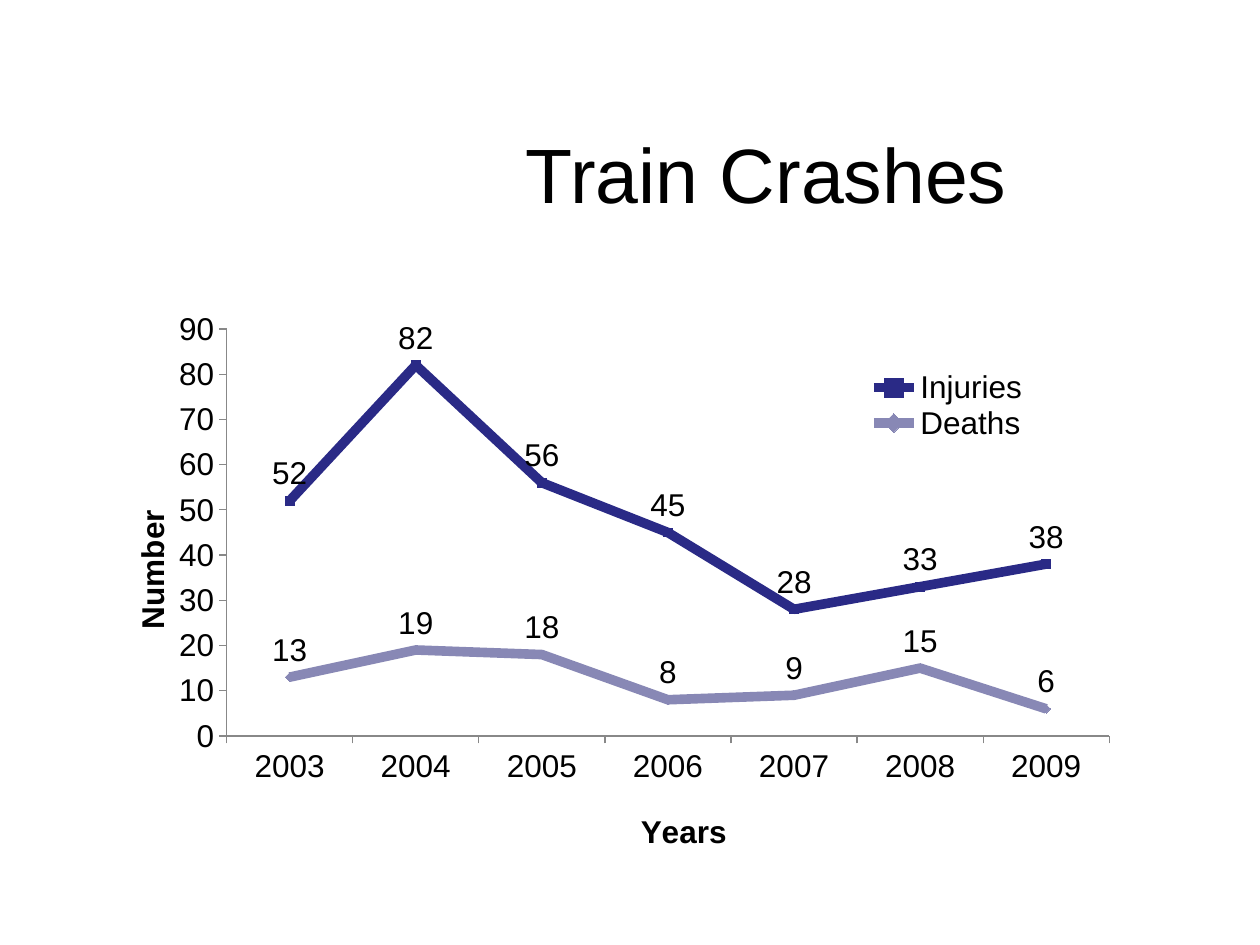
from dataclasses import dataclass

from lxml import etree
from pptx import Presentation
from pptx.chart.data import CategoryChartData
from pptx.dml.color import RGBColor
from pptx.enum.chart import (XL_CHART_TYPE, XL_LABEL_POSITION, XL_LEGEND_POSITION,
                             XL_MARKER_STYLE, XL_TICK_MARK)
from pptx.enum.text import MSO_ANCHOR, PP_ALIGN
from pptx.oxml.ns import qn
from pptx.util import Emu, Pt

LINE_MARKERS = XL_CHART_TYPE.LINE_MARKERS
LABEL_ABOVE = XL_LABEL_POSITION.ABOVE
LEGEND_RIGHT = XL_LEGEND_POSITION.RIGHT
SQUARE, DIAMOND = XL_MARKER_STYLE.SQUARE, XL_MARKER_STYLE.DIAMOND
TICK_OUT, TICK_NONE = XL_TICK_MARK.OUTSIDE, XL_TICK_MARK.NONE
MIDDLE, CENTER = MSO_ANCHOR.MIDDLE, PP_ALIGN.CENTER

FONT = "Arial"
BLACK = "000000"
AXIS_GREY = "888888"
YEARS = [str(year) for year in range(2003, 2010)]


@dataclass
class Series:
    name: str
    values: list[int]
    color: str
    marker: int


SERIES = [
    Series("Injuries", [52, 82, 56, 45, 28, 33, 38], "2A2A86", SQUARE),
    Series("Deaths", [13, 19, 18, 8, 9, 15, 6], "8888B5", DIAMOND),
]


def px(n: int) -> Emu:
    return Emu(round(n * 914400 / 126))


def rgb(color: str) -> RGBColor:
    return RGBColor.from_string(color)


def set_font(font, size: int, bold: bool = False) -> None:
    font.name, font.size, font.bold = FONT, Pt(size), bold
    font.color.rgb = rgb(BLACK)


def place(element, index: int, target: str = "", **fractions: float) -> None:
    """Give a chart part a manual layout in fractions of the chart."""
    for old in element.findall(qn("c:layout")):
        element.remove(old)
    layout = etree.Element(qn("c:layout"))
    element.insert(index, layout)
    manual = etree.SubElement(layout, qn("c:manualLayout"))
    settings = {"layoutTarget": target} if target else {}
    settings |= {"xMode": "edge", "yMode": "edge"} | fractions
    for tag, value in settings.items():
        etree.SubElement(manual, qn(f"c:{tag}")).set("val", str(value))


def style_axis(axis, title: str, x: float, y: float) -> None:
    axis.has_major_gridlines = False
    axis.major_tick_mark, axis.minor_tick_mark = TICK_OUT, TICK_NONE
    axis.format.line.color.rgb = rgb(AXIS_GREY)
    axis.format.line.width = Pt(0.75)
    set_font(axis.tick_labels.font, 18)
    tf = axis.axis_title.text_frame
    tf.text = title
    set_font(tf.paragraphs[0].font, 18, bold=True)
    place(axis.axis_title._element, 1, x=x, y=y)


def style_series(line, series: Series) -> None:
    line.smooth = False
    line.format.line.color.rgb = rgb(series.color)
    line.format.line.width = Pt(5.5)
    line.marker.style, line.marker.size = series.marker, 5
    line.marker.format.fill.solid()
    line.marker.format.fill.fore_color.rgb = rgb(series.color)
    line.marker.format.line.color.rgb = rgb(series.color)
    labels = line.data_labels
    labels.show_value = True
    labels.position = LABEL_ABOVE
    set_font(labels.font, 18)


def add_title(slide, text: str) -> None:
    tf = slide.shapes.add_textbox(px(336), px(94), px(861), px(158)).text_frame
    tf.word_wrap = True
    tf.vertical_anchor = MIDDLE
    p = tf.paragraphs[0]
    p.text, p.alignment = text, CENTER
    set_font(p.font, 44)


def add_line_chart(slide) -> None:
    data = CategoryChartData()
    data.categories = YEARS
    for series in SERIES:
        data.add_series(series.name, series.values)
    chart = slide.shapes.add_chart(
        LINE_MARKERS, px(94), px(242), px(1061), px(640), data).chart
    chart.has_title = False
    set_font(chart.font, 18)
    plot = chart.plots[0]
    plot.vary_by_categories = False
    for line, series in zip(plot.series, SERIES):
        style_series(line, series)

    # Axes
    style_axis(chart.category_axis, "Years", 0.51, 0.88)
    value_axis = chart.value_axis
    style_axis(value_axis, "Number", 0.03, 0.41)
    value_axis.axis_title.text_frame._txBody.bodyPr.set("rot", "-5400000")
    value_axis.minimum_scale, value_axis.maximum_scale = 0, 90
    value_axis.major_unit = 10

    # Legend and plot area
    chart.has_legend = True
    chart.legend.position = LEGEND_RIGHT
    chart.legend.include_in_layout = False
    set_font(chart.legend.font, 18)
    place(chart.legend._element, 1, x=0.73, y=0.2, w=0.15, h=0.11)
    place(chart._chartSpace.chart.plotArea, 0, "inner",
          x=0.125, y=0.136, w=0.832, h=0.636)


def main() -> None:
    prs = Presentation()
    prs.slide_width, prs.slide_height = px(1260), px(945)
    slide = prs.slides.add_slide(prs.slide_layouts[6])
    add_title(slide, "Train Crashes")
    add_line_chart(slide)
    prs.save("out.pptx")


if __name__ == "__main__":
    main()
